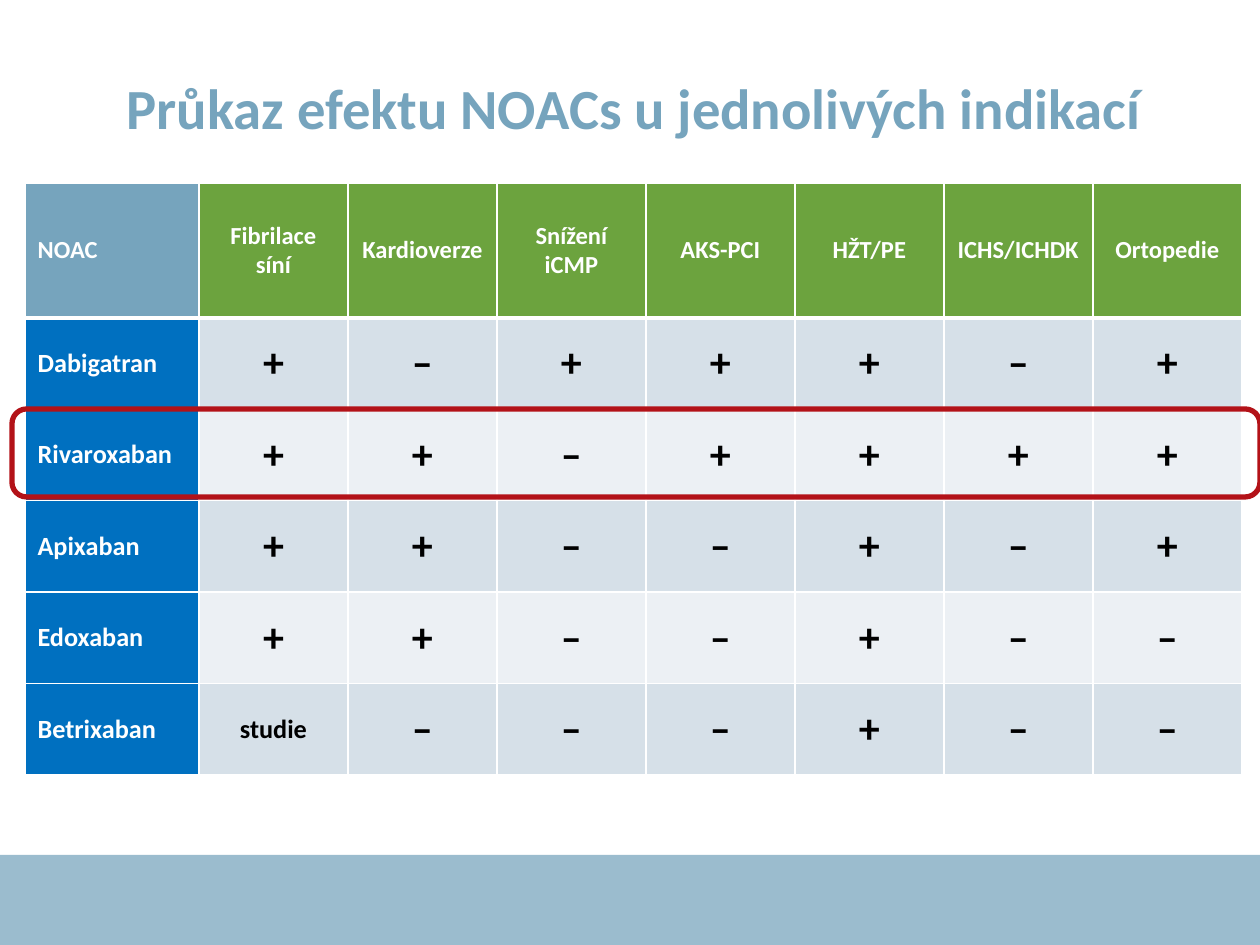
import pptx
import pptx.util
import pptx.dml.color
import pptx.enum.shapes
import pptx.enum.text
import pptx.oxml
import pptx.oxml.ns
from lxml import etree

RGBColor = pptx.dml.color.RGBColor
WHITE = RGBColor(0xFF, 0xFF, 0xFF)
BLACK = RGBColor(0, 0, 0)
STEEL = RGBColor(0x76, 0xA4, 0xBD)
GREEN = RGBColor(0x6C, 0xA3, 0x3E)
BLUE = RGBColor(0x00, 0x70, 0xC0)
BANDS = [RGBColor(0xD6, 0xE0, 0xE8), RGBColor(0xEC, 0xF0, 0xF4)]
RED = RGBColor(0xB3, 0x12, 0x18)
FONT = "Calibri"
SCALE = 914400 / 126
CENTER = pptx.enum.text.PP_ALIGN.CENTER
LEFT = pptx.enum.text.PP_ALIGN.LEFT
MIDDLE = pptx.enum.text.MSO_ANCHOR.MIDDLE


def px(*lengths):
    return [pptx.util.Emu(round(length * SCALE)) for length in lengths]


def write(text_frame, text, size, color, alignment):
    text_frame.text = text
    paragraph = text_frame.paragraphs[0]
    paragraph.alignment = alignment
    font = paragraph.runs[0].font
    font.name = FONT
    font.size = pptx.util.Pt(size)
    font.bold = True
    font.color.rgb = color


presentation = pptx.Presentation()
presentation.slide_width, presentation.slide_height = px(1260, 945)
slide = presentation.slides.add_slide(presentation.slide_layouts[5])

footer = slide.shapes.add_shape(pptx.enum.shapes.MSO_SHAPE.RECTANGLE, *px(0, 855, 1260, 90))
footer.shadow.inherit = False
footer.fill.solid()
footer.fill.fore_color.rgb = STEEL
footer.line.fill.background()
footer_color = footer.fill._xPr.find(".//" + pptx.oxml.ns.qn("a:srgbClr"))
etree.SubElement(footer_color, pptx.oxml.ns.qn("a:alpha"), val="73000")

title = slide.shapes.title
title.left, title.top, title.width, title.height = px(63, 69, 1142, 84)
title_frame = title.text_frame
title_frame.auto_size = pptx.enum.text.MSO_AUTO_SIZE.NONE
title_frame.vertical_anchor = MIDDLE
title_frame.margin_left, title_frame.margin_right = px(8, 8)
title_frame.margin_top, title_frame.margin_bottom = px(4, 4)
write(title_frame, "Průkaz efektu NOACs u jednolivých indikací", 32.4, STEEL, CENTER)
title_frame.paragraphs[0].line_spacing = 0.9

headers = ["NOAC", "Fibrilace síní", "Kardioverze", "Snížení iCMP",
           "AKS-PCI", "HŽT/PE", "ICHS/ICHDK", "Ortopedie"]
effects = [
    ["Dabigatran", "+", "–", "+", "+", "+", "–", "+"],
    ["Rivaroxaban", "+", "+", "–", "+", "+", "+", "+"],
    ["Apixaban", "+", "+", "–", "–", "+", "–", "+"],
    ["Edoxaban", "+", "+", "–", "–", "+", "–", "–"],
    ["Betrixaban", "studie", "–", "–", "–", "+", "–", "–"],
]
rows = [headers] + effects
table = slide.shapes.add_table(len(rows), len(headers), *px(25, 183, 1217, 592)).table
for index, column in enumerate(table.columns):
    column.width = px(149 if index else 174)[0]
for index, row in enumerate(table.rows):
    row.height = px(91.4 if index else 135)[0]

for row_index, values in enumerate(rows):
    for column_index, value in enumerate(values):
        cell = table.cell(row_index, column_index)
        cell.vertical_anchor = MIDDLE
        if row_index == 0:
            size, color, fill = 14, WHITE, GREEN if column_index else STEEL
        elif column_index == 0:
            size, color, fill = 15, WHITE, BLUE
        else:
            size = 15 if value == "studie" else 24
            color, fill = BLACK, BANDS[(row_index - 1) % 2]
        write(cell.text_frame, value, size, color, CENTER if column_index else LEFT)
        cell.fill.solid()
        cell.fill.fore_color.rgb = fill
        properties = cell._tc.get_or_add_tcPr()
        for position, side in enumerate("LRTB"):
            thick = (row_index, side) in [(0, "B"), (1, "T")]
            width = pptx.util.Pt(3 if thick else 1)
            border = pptx.oxml.parse_xml(
                f'<a:ln{side} {pptx.oxml.ns.nsdecls("a")} w="{width}"><a:solidFill>'
                f'<a:srgbClr val="{WHITE}"/></a:solidFill></a:ln{side}>')
            properties.insert(position, border)

highlight = slide.shapes.add_shape(
    pptx.enum.shapes.MSO_SHAPE.ROUNDED_RECTANGLE, *px(12, 409, 1248, 88))
highlight.shadow.inherit = False
highlight.fill.background()
highlight.line.color.rgb = RED
highlight.line.width = pptx.util.Pt(3)

presentation.save("out.pptx")
